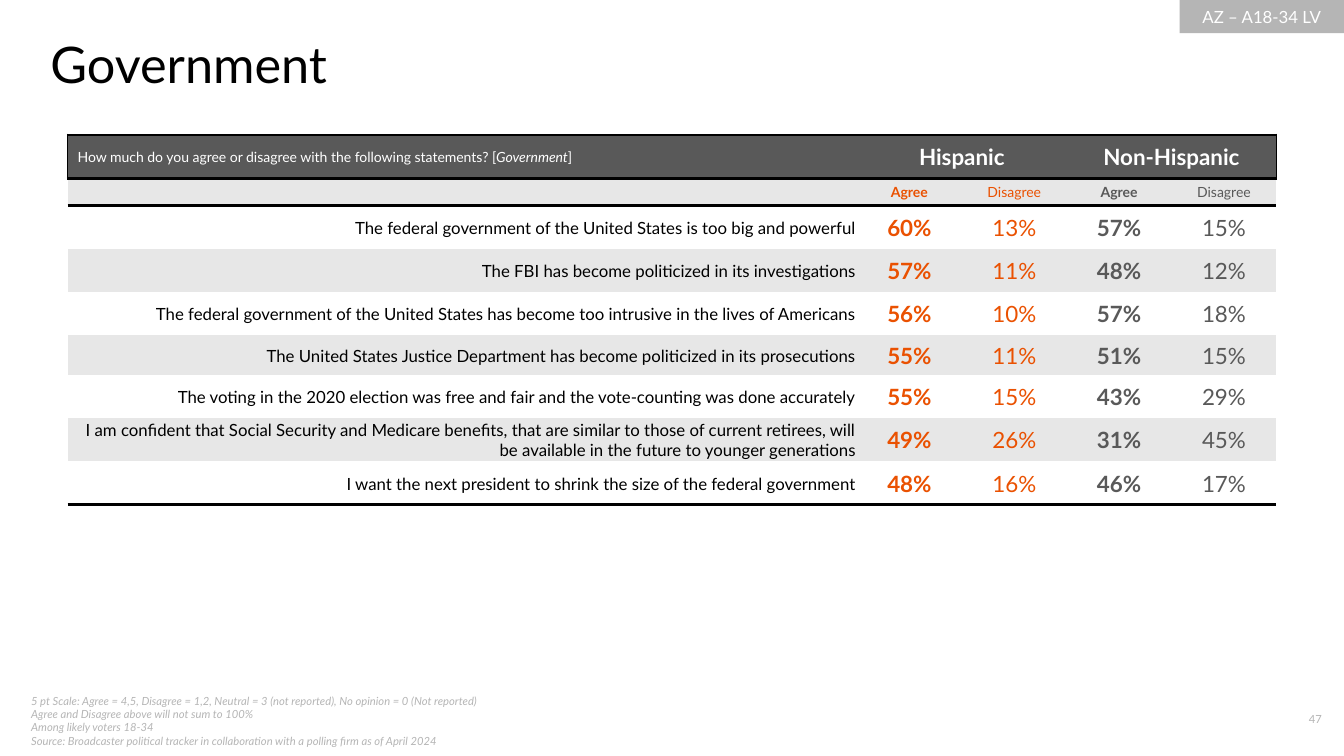
from dataclasses import dataclass

from lxml.etree import SubElement
from pptx import Presentation
from pptx.dml.color import RGBColor as Color
from pptx.enum.shapes import MSO_SHAPE as Preset
from pptx.enum.text import MSO_ANCHOR as Anchor, PP_ALIGN as Align
from pptx.oxml.ns import qn
from pptx.util import Emu, Pt

EMU_PER_PX = 9144  # 100 px to the inch
NO_GRID_STYLE = "{2D5ABB26-0587-4C30-8999-92F81FD0307C}"


@dataclass(frozen=True)
class Theme:
    font: str = "Lato"
    black: str = "000000"
    white: str = "FFFFFF"
    muted: str = "B5B5B5"
    band: str = "E7E7E7"
    dark: str = "595959"
    accent: str = "EA5101"
    title: int = 36
    figure: int = 16
    body: int = 12
    label: int = 10
    note: int = 8


THEME = Theme()
VALUE_COLORS = [THEME.accent, THEME.accent, THEME.dark, THEME.dark]

FOOTNOTES = """5 pt Scale: Agree = 4,5, Disagree = 1,2, Neutral = 3 (not reported), No opinion = 0 (Not reported)
Agree and Disagree above will not sum to 100%
Among likely voters 18-34
Source: Broadcaster political tracker in collaboration with a polling firm as of April 2024"""

STATEMENTS = [
    ("The federal government of the United States is too big and powerful", 60, 13, 57, 15),
    ("The FBI has become politicized in its investigations", 57, 11, 48, 12),
    ("The federal government of the United States has become too intrusive in the lives of Americans",
     56, 10, 57, 18),
    ("The United States Justice Department has become politicized in its prosecutions", 55, 11, 51, 15),
    ("The voting in the 2020 election was free and fair and the vote-counting was done accurately",
     55, 15, 43, 29),
    ("I am confident that Social Security and Medicare benefits, that are similar to those of current "
     "retirees, will be available in the future to younger generations", 49, 26, 31, 45),
    ("I want the next president to shrink the size of the federal government", 48, 16, 46, 17),
]
COLUMN_WIDTHS = [783, 104, 104, 104, 104]
ROW_HEIGHTS = [43, 25, 43, 43, 43, 39, 43, 43, 43]


def px(value):
    return Emu(value * EMU_PER_PX)


def format_run(run, size, color, bold=False, italic=False):
    font = run.font
    font.name, font.size = THEME.font, Pt(size)
    font.bold, font.italic = bold, italic
    font.color.rgb = Color.from_string(color)


def write(text_frame, text, size, color, align=Align.LEFT, **style):
    text_frame.text = text
    for paragraph in text_frame.paragraphs:
        paragraph.alignment = align
        for run in paragraph.runs:
            format_run(run, size, color, **style)


def add_text(slide, box, text, size, color, anchor=Anchor.TOP, inset=True, **style):
    text_frame = slide.shapes.add_textbox(*map(px, box)).text_frame
    text_frame.word_wrap = True
    text_frame.vertical_anchor = anchor
    if not inset:
        text_frame.margin_left = text_frame.margin_right = 0
        text_frame.margin_top = text_frame.margin_bottom = 0
    write(text_frame, text, size, color, **style)


def add_tag(slide, box, text):
    shape = slide.shapes.add_shape(Preset.RECTANGLE, *map(px, box))
    shape.shadow.inherit = False
    shape.fill.solid()
    shape.fill.fore_color.rgb = Color.from_string(THEME.muted)
    shape.line.fill.background()
    shape.text_frame.vertical_anchor = Anchor.MIDDLE
    write(shape.text_frame, text, THEME.body, THEME.white, Align.CENTER)


def add_border(cell, side, points):
    line = SubElement(cell._tc.get_or_add_tcPr(), qn(f"a:ln{side}"), w=str(Pt(points)))
    fill = SubElement(line, qn("a:solidFill"))
    SubElement(fill, qn("a:srgbClr"), val=THEME.black)


def style_cell(cell, fill, borders=()):
    cell.vertical_anchor = Anchor.MIDDLE
    for side, points in borders:
        add_border(cell, side, points)
    cell.fill.solid()
    cell.fill.fore_color.rgb = Color.from_string(fill)


def fill_header(table):
    for column in range(5):
        sides = [("L", 1)] if column == 0 else [("R", 1)] if column > 2 else []
        style_cell(table.cell(0, column), THEME.dark, sides + [("T", 2.25), ("B", 2.25)])
        style_cell(table.cell(1, column), THEME.band, [("T", 2.25)])

    # Question, with the topic in italics
    paragraph = table.cell(0, 0).text_frame.paragraphs[0]
    for text in ("How much do you agree or disagree with the following statements? [", "Government", "]"):
        run = paragraph.add_run()
        run.text = text
        format_run(run, THEME.label, THEME.white, italic=text == "Government")

    # Groups and their answers
    for column, group in ((1, "Hispanic"), (3, "Non-Hispanic")):
        cell = table.cell(0, column)
        cell.merge(table.cell(0, column + 1))
        write(cell.text_frame, group, THEME.figure, THEME.white, Align.CENTER, bold=True)
    for index, color in enumerate(VALUE_COLORS):
        is_agree = index % 2 == 0
        write(table.cell(1, index + 1).text_frame, "Agree" if is_agree else "Disagree",
              THEME.label, color, Align.CENTER, bold=is_agree)

    # The empty corner must not stretch its row
    corner = table.cell(1, 0).text_frame.paragraphs[0]
    SubElement(corner._p, qn("a:endParaRPr"), sz=str(THEME.label * 100))


def fill_statement(table, row, statement, values):
    fill = THEME.band if row % 2 else THEME.white
    borders = [("B", 2.25)] if row == len(ROW_HEIGHTS) - 1 else []
    for column in range(5):
        cell = table.cell(row, column)
        style_cell(cell, fill, borders)
        cell.margin_left = cell.margin_right = cell.margin_top = px(1)
        cell.margin_bottom = 0
    write(table.cell(row, 0).text_frame, statement, THEME.body, THEME.black, Align.RIGHT)
    for index, (value, color) in enumerate(zip(values, VALUE_COLORS)):
        write(table.cell(row, index + 1).text_frame, f"{value}%", THEME.figure, color,
              Align.CENTER, bold=index % 2 == 0)


def add_results_table(slide, left, top):
    size = px(sum(COLUMN_WIDTHS)), px(sum(ROW_HEIGHTS))
    table = slide.shapes.add_table(len(ROW_HEIGHTS), len(COLUMN_WIDTHS), px(left), px(top), *size).table
    table.first_row = table.horz_banding = False
    table._tbl.tblPr.find(qn("a:tableStyleId")).text = NO_GRID_STYLE
    for column, width in zip(table.columns, COLUMN_WIDTHS):
        column.width = px(width)
    for row, height in zip(table.rows, ROW_HEIGHTS):
        row.height = px(height)
    fill_header(table)
    for row, (statement, *values) in enumerate(STATEMENTS, start=2):
        fill_statement(table, row, statement, values)


def main():
    presentation = Presentation()
    presentation.slide_width, presentation.slide_height = px(1333), px(750)
    slide = presentation.slides.add_slide(presentation.slide_layouts[6])

    # Footer and audience tag
    add_text(slide, (21, 695, 511, 40), FOOTNOTES, THEME.note, THEME.muted,
             anchor=Anchor.MIDDLE, italic=True)
    add_text(slide, (1233, 702, 88, 27), "47", THEME.note, THEME.muted, align=Align.RIGHT)
    add_tag(slide, (1170, 0, 163, 33), "AZ – A18-34 LV")

    # Title and results
    add_text(slide, (50, 33, 1200, 61), "Government", THEME.title, THEME.black, inset=False)
    add_results_table(slide, 67, 134)

    presentation.save("out.pptx")


if __name__ == "__main__":
    main()
